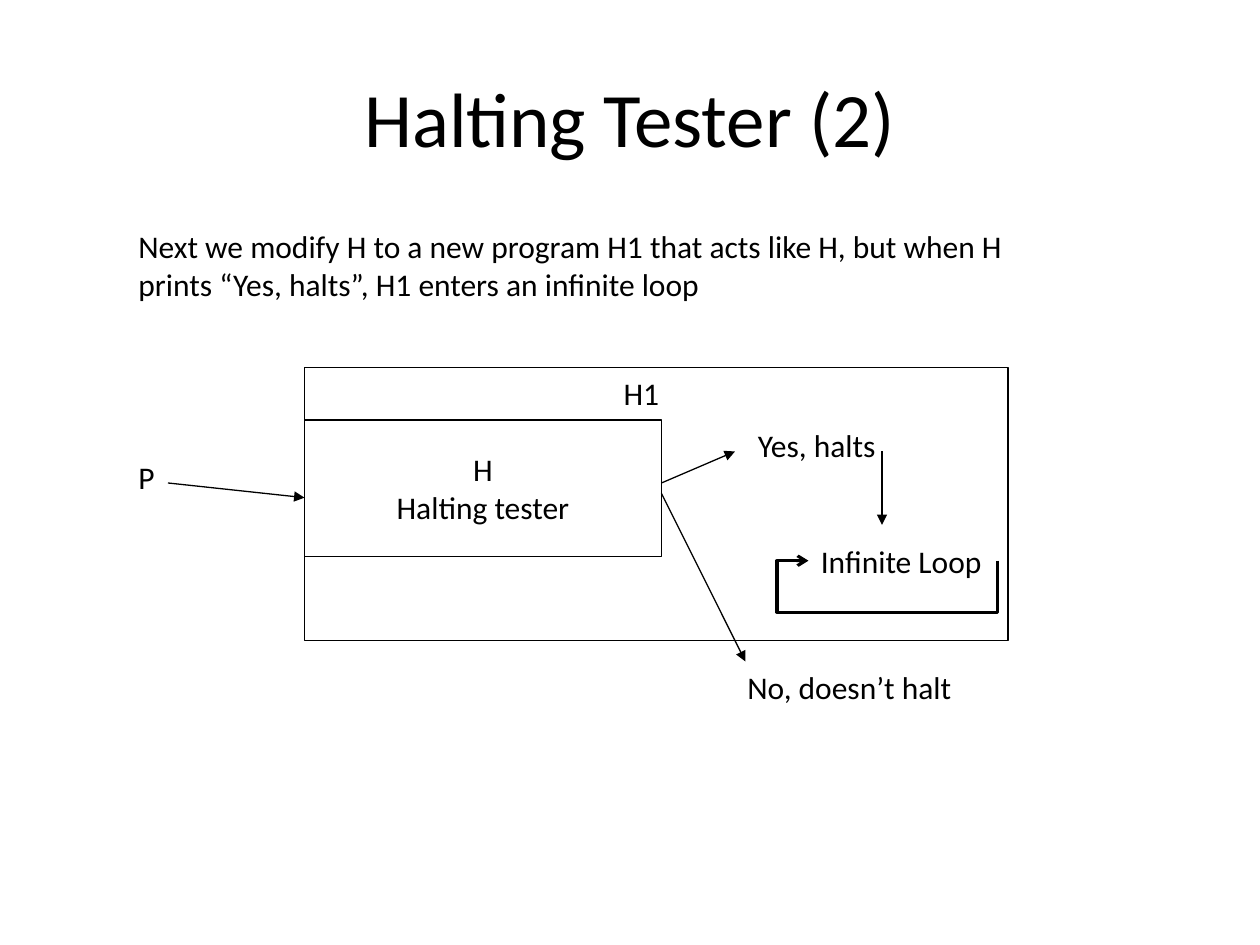
import dataclasses

import lxml.etree
import pptx
import pptx.dml.color
import pptx.enum.shapes
import pptx.enum.text
import pptx.oxml.ns
import pptx.util

ALIGN = pptx.enum.text.PP_ALIGN
SHAPE = pptx.enum.shapes.MSO_SHAPE


@dataclasses.dataclass(frozen=True)
class Theme:
    """Colours, type sizes and line widths of the slide."""
    ink: pptx.dml.color.RGBColor = pptx.dml.color.RGBColor(0, 0, 0)
    font: str = "Calibri"
    title: int = 44
    body: int = 18
    thin: float = 0.75
    thick: float = 1.75


@dataclasses.dataclass(frozen=True)
class Box:
    """A region measured in grid cells of a twelfth of an inch."""
    col: float
    row: float
    cols: float
    rows: float

    def inner(self, col, row, cols, rows):
        """Return a box placed relative to this one."""
        return Box(self.col + col, self.row + row, cols, rows)

    def point(self, col, row):
        """Return a relative grid point as slide lengths."""
        return cell(self.col + col), cell(self.row + row)

    def frame(self):
        """Return left, top, width and height as slide lengths."""
        return [cell(n) for n in (self.col, self.row, self.cols, self.rows)]


THEME = Theme()


def cell(n):
    """Convert grid cells to a slide length."""
    return pptx.util.Inches(n / 12)


def write(tf, lines, size, align):
    """Fill a text frame with one paragraph per line."""
    for i, line in enumerate(lines):
        p = tf.paragraphs[0] if i == 0 else tf.add_paragraph()
        p.text = line
        p.alignment = align
        p.font.name = THEME.font
        p.font.size = pptx.util.Pt(size)
        p.font.color.rgb = THEME.ink


def outline(sp, width, head=None):
    """Draw the line of a shape or connector, with an optional arrowhead."""
    sp.line.color.rgb = THEME.ink
    sp.line.width = pptx.util.Pt(width)
    if head:
        ln = sp.element.spPr.find(pptx.oxml.ns.qn("a:ln"))
        lxml.etree.SubElement(ln, pptx.oxml.ns.qn("a:tailEnd"), type=head)


def label(s, box, text, wrap=False):
    """Add a text box that grows with its text."""
    tf = s.shapes.add_textbox(*box.frame()).text_frame
    tf.word_wrap = wrap
    tf.auto_size = pptx.enum.text.MSO_AUTO_SIZE.SHAPE_TO_FIT_TEXT
    write(tf, [text], THEME.body, ALIGN.LEFT)


def frame(s, box, lines=()):
    """Add an unfilled rectangle with centred lines of text."""
    sp = s.shapes.add_shape(SHAPE.RECTANGLE, *box.frame())
    sp.shadow.inherit = False
    sp.fill.background()
    outline(sp, THEME.thin)
    sp.text_frame.word_wrap = False
    sp.text_frame.vertical_anchor = pptx.enum.text.MSO_ANCHOR.MIDDLE
    write(sp.text_frame, lines, THEME.body, ALIGN.CENTER)


def arrow(s, start, end):
    """Add a straight arrow."""
    straight = pptx.enum.shapes.MSO_CONNECTOR.STRAIGHT
    sp = s.shapes.add_connector(straight, *start, *end)
    outline(sp, THEME.thin, "triangle")
    lxml.etree.SubElement(sp.element.spPr, pptx.oxml.ns.qn("a:effectLst"))


def loop_arrow(s, points):
    """Add an open outline that ends in an arrowhead."""
    builder = s.shapes.build_freeform(*points[0])
    builder.add_line_segments(points[1:], close=False)
    sp = builder.convert_to_shape()
    sp.shadow.inherit = False
    sp.fill.background()
    outline(sp, THEME.thick, "arrow")


def title(s, box, text):
    """Place and format the title placeholder."""
    sp = s.shapes.title
    sp.left, sp.top, sp.width, sp.height = box.frame()
    sp.text_frame.vertical_anchor = pptx.enum.text.MSO_ANCHOR.MIDDLE
    write(sp.text_frame, [text], THEME.title, ALIGN.CENTER)


def diagram(s, box):
    """Draw program H inside H1 with its input, outcomes and endless loop."""
    frame(s, box.inner(17, 5, 34, 13), ["H", "Halting tester"])
    frame(s, box.inner(17, 0, 67, 26))
    for col, row, cols, text in (
        (0, 8, 4.7, "P"),
        (59, 5, 13.8, "Yes, halts"),
        (58, 28, 22, "No, doesn’t halt"),
        (46.2, 0, 8, "H1"),
        (65, 16, 18, "Infinite Loop"),
    ):
        label(s, box.inner(col, row, cols, 4.8), text)
    for start, end in (
        ((4, 11), (17, 12.4)),
        ((51, 11), (58, 8)),
        ((51, 12), (59, 28)),
        ((72, 8), (72, 15)),
    ):
        arrow(s, box.point(*start), box.point(*end))
    left, right, top, bottom = 62, 83, 18.4, 23.3
    corners = (right, top), (right, bottom), (left, bottom), (left, top), (left + 3, top)
    loop_arrow(s, [box.point(*corner) for corner in corners])


def main():
    """Build and save the slide."""
    prs = pptx.Presentation()
    prs.slide_width, prs.slide_height = cell(120), cell(90)
    s = prs.slides.add_slide(prs.slide_layouts.get_by_name("Title Only"))
    title(s, Box(6, 3.6, 108, 15), "Halting Tester (2)")
    label(
        s,
        Box(12, 21, 92, 8.5),
        "Next we modify H to a new program H1 that acts like H, "
        "but when H prints “Yes, halts”, H1 enters an infinite loop",
        wrap=True,
    )
    diagram(s, Box(12, 35, 84, 33))
    prs.save("out.pptx")


if __name__ == "__main__":
    main()
